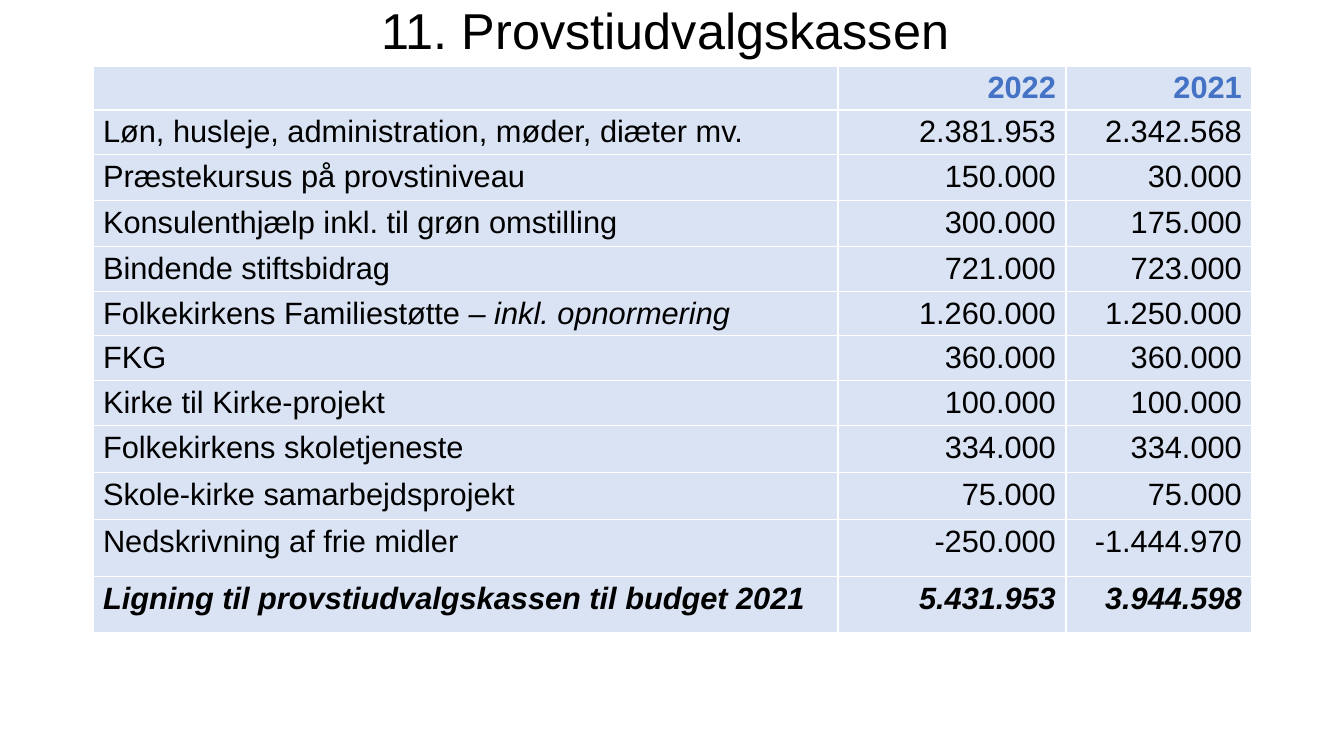
from pptx import Presentation
from pptx.dml.color import RGBColor
from pptx.enum.text import MSO_ANCHOR, PP_ALIGN
from pptx.util import Emu, Pt


def px(n):
    return Emu(round(n * 914400 / 100.8))


def add_run(p, text, size, color="000000", bold=False, italic=False):
    r = p.add_run()
    r.text = text
    r.font.name = "Arial"
    r.font.size = Pt(size)
    r.font.bold = bold
    r.font.italic = italic
    r.font.color.rgb = RGBColor.from_string(color)


prs = Presentation()
prs.slide_width, prs.slide_height = px(1344), px(756)
s = prs.slides.add_slide(prs.slide_layouts[6])

# Title
sp = s.shapes.add_textbox(px(93), px(0), px(1159), px(66))
tf = sp.text_frame
tf.word_wrap = True
tf.vertical_anchor = MSO_ANCHOR.MIDDLE
p = tf.paragraphs[0]
p.alignment = PP_ALIGN.CENTER
p.line_spacing = 0.9
add_run(p, "11. Provstiudvalgskassen ", 36)

# Budget rows: height, label, 2022, 2021
budget = [
    (43, "", "2022", "2021"),
    (45, "Løn, husleje, administration, møder, diæter mv.", "2.381.953", "2.342.568"),
    (46, "Præstekursus på provstiniveau", "150.000", "30.000"),
    (46, "Konsulenthjælp inkl. til grøn omstilling", "300.000", "175.000"),
    (45, "Bindende stiftsbidrag", "721.000", "723.000"),
    (44, "Folkekirkens Familiestøtte ", "1.260.000", "1.250.000"),
    (45, "FKG", "360.000", "360.000"),
    (45, "Kirke til Kirke-projekt", "100.000", "100.000"),
    (47, "Folkekirkens skoletjeneste", "334.000", "334.000"),
    (47, "Skole-kirke samarbejdsprojekt", "75.000", "75.000"),
    (57, "Nedskrivning af frie midler", "-250.000", "-1.444.970"),
    (56, "Ligning til provstiudvalgskassen til budget 2021", "5.431.953", "3.944.598"),
]
label_notes = {"Folkekirkens Familiestøtte ": "– inkl. opnormering"}
col_widths = [745, 228, 186]

# Table; its default style draws the white rules
table = s.shapes.add_table(len(budget), len(col_widths), px(93), px(66),
                           px(sum(col_widths)), px(sum(row[0] for row in budget))).table
table.horz_banding = False
for column, width in zip(table.columns, col_widths):
    column.width = px(width)

for i, (height, *texts) in enumerate(budget):
    table.rows[i].height = px(height)
    header, total = i == 0, i == len(budget) - 1
    for j, text in enumerate(texts):
        cell = table.cell(i, j)
        cell.fill.solid()
        cell.fill.fore_color.rgb = RGBColor.from_string("DAE3F3")
        cell.margin_top, cell.margin_bottom = px(5), px(2)
        p = cell.text_frame.paragraphs[0]
        p.alignment = PP_ALIGN.RIGHT if j else PP_ALIGN.LEFT
        if text:
            add_run(p, text, 22, "4472C4" if header else "000000", header or total, total)
        if text in label_notes:
            add_run(p, label_notes[text], 22, italic=True)

prs.save("out.pptx")
